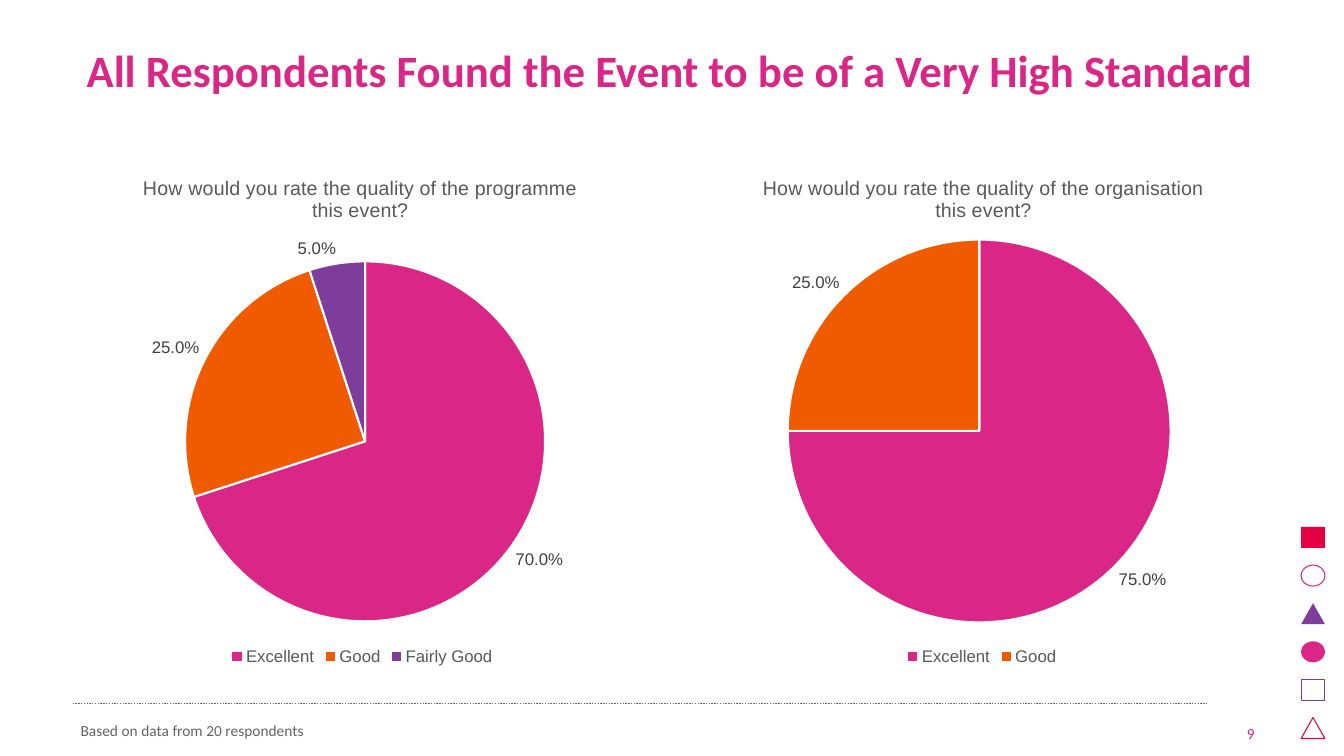
from lxml import etree
from pptx import Presentation
from pptx.chart.data import CategoryChartData
from pptx.dml.color import RGBColor
from pptx.enum.chart import XL_CHART_TYPE, XL_LABEL_POSITION, XL_LEGEND_POSITION
from pptx.enum.dml import MSO_LINE
from pptx.enum.shapes import MSO_CONNECTOR, MSO_SHAPE
from pptx.enum.text import MSO_ANCHOR, PP_ALIGN
from pptx.oxml.ns import qn
from pptx.util import Cm, Pt

PIE = XL_CHART_TYPE.PIE
OUTSIDE_END = XL_LABEL_POSITION.OUTSIDE_END
LEGEND_BOTTOM = XL_LEGEND_POSITION.BOTTOM
DOTTED = MSO_LINE.ROUND_DOT
STRAIGHT = MSO_CONNECTOR.STRAIGHT
SQUARE, CIRCLE, TRIANGLE = MSO_SHAPE.RECTANGLE, MSO_SHAPE.OVAL, MSO_SHAPE.ISOSCELES_TRIANGLE
MIDDLE, BOTTOM = MSO_ANCHOR.MIDDLE, MSO_ANCHOR.BOTTOM
LEFT, RIGHT = PP_ALIGN.LEFT, PP_ALIGN.RIGHT

COLOURS = {
    "pink": "DA2686",
    "orange": "F05B00",
    "purple": "7E3C9B",
    "red": "E50043",
    "grey": "646464",
    "chart text": "595959",
    "label": "404040",
    "white": "FFFFFF",
}


def colour(name):
    return RGBColor.from_string(COLOURS[name])


def set_font(font, size, colour_name, name="Arial", bold=False):
    font.name = name
    font.size = Pt(size)
    font.bold = bold
    font.color.rgb = colour(colour_name)


def write_text(frame, text, size=11, colour_name="grey", bold=False,
               align=LEFT, anchor=BOTTOM, line_spacing=1.0):
    frame.word_wrap = True
    frame.vertical_anchor = anchor
    paragraph = frame.paragraphs[0]
    paragraph.alignment = align
    paragraph.line_spacing = line_spacing
    run = paragraph.add_run()
    run.text = text
    set_font(run.font, size, colour_name, "Calibri", bold)


def set_layout(parent, **values):
    for old in parent.findall(qn("c:layout")):
        parent.remove(old)
    layout = etree.Element(qn("c:layout"))
    manual = etree.SubElement(layout, qn("c:manualLayout"))
    for tag, value in values.items():
        etree.SubElement(manual, qn(f"c:{tag}")).set("val", str(value))
    return layout


class SlideBuilder:
    def __init__(self, presentation):
        self.slide = presentation.slides.add_slide(presentation.slide_layouts[5])
        self.shapes = self.slide.shapes

    def title(self, text, left, top, width, height):
        title = self.shapes.title
        title.left, title.top = Cm(left), Cm(top)
        title.width, title.height = Cm(width), Cm(height)
        write_text(title.text_frame, text, size=32, colour_name="pink", bold=True,
                   anchor=MIDDLE, line_spacing=0.9)

    def text(self, text, left, top, width, height, **text_format):
        box = self.shapes.add_textbox(Cm(left), Cm(top), Cm(width), Cm(height))
        write_text(box.text_frame, text, **text_format)

    def marker(self, kind, colour_name, filled, left, top):
        shape = self.shapes.add_shape(kind, Cm(left), Cm(top), Cm(0.6), Cm(0.53))
        shape.shadow.inherit = False
        if filled:
            shape.fill.solid()
            shape.fill.fore_color.rgb = colour(colour_name)
            shape.line.fill.background()
        else:
            shape.fill.background()
            shape.line.color.rgb = colour(colour_name)
            shape.line.width = Pt(0.75)

    def dotted_rule(self, left, right, top):
        rule = self.shapes.add_connector(STRAIGHT, Cm(left), Cm(top), Cm(right), Cm(top))
        rule.line.color.rgb = colour("grey")
        rule.line.width = Pt(1)
        rule.line.dash_style = DOTTED
        etree.SubElement(rule._element.spPr, qn("a:effectLst"))

    def pie(self, question, answers, left, plot):
        data = CategoryChartData(number_format="0.0%")
        data.categories = list(answers)
        data.add_series("Series 1", [share for share, _ in answers.values()])
        chart = self.shapes.add_chart(
            PIE, Cm(left), Cm(3.81), Cm(14.4), Cm(13.06), data).chart
        set_font(chart.font, 10, "chart text")

        chart.has_title = True
        title_frame = chart.chart_title.text_frame
        title_frame.text = question
        set_font(title_frame.paragraphs[0].runs[0].font, 14, "chart text")
        title_element = chart.chart_title._element
        title_layout = set_layout(title_element, xMode="edge", yMode="edge", x=0.11, y=0.04)
        title_element.find(qn("c:tx")).addnext(title_layout)

        chart.has_legend = True
        chart.legend.position = LEGEND_BOTTOM
        chart.legend.include_in_layout = False
        set_font(chart.legend.font, 12, "chart text")

        pie_plot = chart.plots[0]
        pie_plot.vary_by_categories = True
        plot_area = pie_plot._element.getparent()
        x, y, width, height = plot
        plot_area.insert(0, set_layout(
            plot_area, layoutTarget="inner", xMode="edge", yMode="edge",
            x=x, y=y, w=width, h=height))

        series = pie_plot.series[0]
        for index, (_, colour_name) in enumerate(answers.values()):
            point_format = series.points[index].format
            point_format.fill.solid()
            point_format.fill.fore_color.rgb = colour(colour_name)
            point_format.line.color.rgb = colour("white")
            point_format.line.width = Pt(1.5)

        labels = series.data_labels
        labels.show_value = True
        labels.show_percentage = False
        labels.number_format = "0.0%"
        labels.number_format_is_linked = False
        labels.position = OUTSIDE_END
        set_font(labels.font, 12, "label")


def main():
    presentation = Presentation()
    presentation.slide_width = Cm(33.87)
    presentation.slide_height = Cm(19.05)
    builder = SlideBuilder(presentation)

    markers = [
        (SQUARE, "red", True),
        (CIRCLE, "pink", False),
        (TRIANGLE, "purple", True),
        (CIRCLE, "pink", True),
        (SQUARE, "purple", False),
        (TRIANGLE, "red", False),
    ]
    for row, (kind, colour_name, filled) in enumerate(markers):
        builder.marker(kind, colour_name, filled, 32.79, 13.28 + 0.96 * row)

    builder.dotted_rule(1.83, 30.45, 17.73)
    builder.title("All Respondents Found the Event to be of a Very High Standard",
                  1.93, 0.43, 30, 2.84)
    builder.pie(
        "How would you rate the quality of the programme this event?",
        {"Excellent": (0.7, "pink"), "Good": (0.25, "orange"), "Fairly Good": (0.05, "purple")},
        1.93, (0.19, 0.21, 0.63, 0.7))
    builder.pie(
        "How would you rate the quality of the organisation this event?",
        {"Excellent": (0.75, "pink"), "Good": (0.25, "orange")},
        17.55, (0.16, 0.17, 0.67, 0.74))
    builder.text("Based on data from 20 respondents", 1.78, 17.63, 28.6, 1.14)
    builder.text("9", 30.78, 17.81, 1.09, 1.02, colour_name="pink", align=RIGHT)

    presentation.save("out.pptx")


if __name__ == "__main__":
    main()
